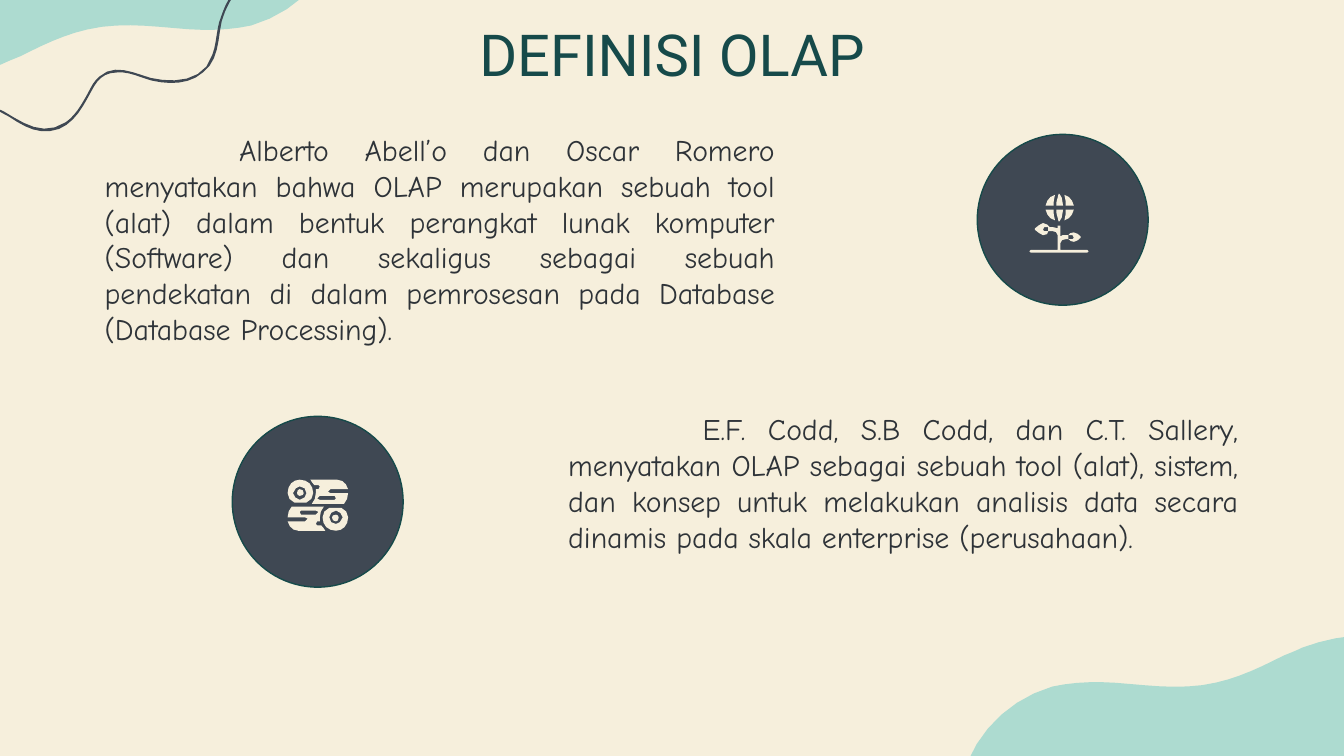
import math

from pptx import Presentation, util as u
from pptx.dml.color import RGBColor
from pptx.enum import shapes, text

COLORS = {"cream": "F6EFDC", "mint": "ADDBD0", "slate": "3F4853", "teal": "164A4A", "ink": "2E3338"}
UNIT = u.Cm(2.54) / 100

deck = Presentation()
deck.slide_width, deck.slide_height = u.Cm(25.4), u.Cm(14.29)
slide = deck.slides.add_slide(deck.slide_layouts[6])
slide.background.fill.solid()
slide.background.fill.fore_color.rgb = RGBColor.from_string(COLORS["cream"])


def draw_outline(contours, color, flip_x=None, flip_y=None):
    builder = None
    for start, *segments in contours:
        points = [start]
        for segment in segments:
            if len(segment) == 2:
                points.append(segment)
                continue
            knots = [points[-1], segment[:2], segment[2:4], segment[4:]]
            span = sum(abs(a - b) for a, b in zip(knots[0], knots[3]))
            steps = 1 if span < 2 else min(6, max(2, math.ceil(span / 6)))
            for step in range(1, steps + 1):
                t = step / steps
                weights = ((1 - t) ** 3, 3 * t * (1 - t) ** 2, 3 * t * t * (1 - t), t ** 3)
                points.append(tuple(sum(w * k[axis] for w, k in zip(weights, knots)) for axis in (0, 1)))
        placed = [((x if flip_x is None else flip_x - x) * UNIT,
                   (y if flip_y is None else flip_y - y) * UNIT) for x, y in dict.fromkeys(points)]
        if builder is None:
            builder = slide.shapes.build_freeform(*placed[0])
        else:
            builder.move_to(*placed[0])
        builder.add_line_segments(placed[1:], close=True)
    outline = builder.convert_to_shape()
    outline.shadow.inherit = False
    outline.fill.solid()
    outline.fill.fore_color.rgb = RGBColor.from_string(COLORS[color])
    outline.line.fill.background()


def write_text(words, left, top, width, height, font, size, color, align, indent=0):
    box = slide.shapes.add_textbox(u.Cm(left), u.Cm(top), u.Cm(width), u.Cm(height))
    frame = box.text_frame
    frame.word_wrap = True
    frame.margin_left = frame.margin_right = frame.margin_top = frame.margin_bottom = 0
    paragraph = frame.paragraphs[0]
    paragraph.text = words
    paragraph.alignment = align
    paragraph.font.name = font
    paragraph.font.size = u.Pt(size)
    paragraph.font.color.rgb = RGBColor.from_string(COLORS[color])
    if indent:
        properties = paragraph._p.get_or_add_pPr()
        properties.set("marL", "0")
        properties.set("indent", str(u.Cm(indent)))


corner_blob = [[
    (-139, -37), (-140, -21, -138, -6, -132, 8), (-123, 29, -103, 45, -82, 52),
    (-79, 53, -77, 54, -74, 54), (-49, 60, -23, 57, 1, 48), (5, 46, 10, 44, 15, 42),
    (31, 34, 47, 26, 65, 22), (86, 17, 108, 19, 130, 21), (150, 23, 169, 23, 187, 19),
    (215, 11, 239, -10, 250, -37)]]
draw_outline(corner_blob, "mint")
draw_outline(corner_blob, "mint", 970, 530)

wavy_strand = [[
    (198, -28), (186, -21, 177, -12, 170, 0), (167, 5, 165, 11, 163, 17),
    (161, 25, 161, 33, 158, 41), (152, 61, 129, 62, 112, 58), (99, 54, 85, 47, 74, 57),
    (69, 61, 67, 67, 64, 72), (60, 79, 56, 86, 49, 91), (32, 102, 18, 92, 3, 83),
    (-21, 68, -52, 74, -69, 97), (-73, 101, -75, 106, -77, 112), (-75, 112),
    (-70, 96, -58, 84, -42, 79), (-25, 73, -8, 78, 7, 87), (19, 95, 30, 101, 44, 96),
    (56, 91, 62, 79, 68, 68), (72, 60, 77, 54, 87, 54), (96, 53, 105, 58, 113, 60),
    (126, 63, 141, 63, 151, 54), (163, 45, 162, 30, 165, 16), (169, 1, 179, -12, 191, -22),
    (199, -26)]]
draw_outline(wavy_strand, "slate")

write_text("DEFINISI OLAP", 1.98, 0.36, 21.44, 1.27, "Roboto", 31, "teal", text.PP_ALIGN.CENTER)

definitions = [
    ("Alberto Abell’o dan Oscar Romero menyatakan bahwa OLAP merupakan sebuah tool (alat) dalam bentuk "
     "perangkat lunak komputer (Software) dan sekaligus sebagai sebuah pendekatan di dalam pemrosesan "
     "pada Database (Database Processing).", 1.98, 2.49, 4.24),
    ("E.F. Codd, S.B Codd, dan C.T. Sallery, menyatakan OLAP sebagai sebuah tool (alat), sistem, dan "
     "konsep untuk melakukan analisis data secara dinamis pada skala enterprise (perusahaan).",
     10.74, 7.77, 3.61)]
for words, left, top, height in definitions:
    write_text(words, left, top, 12.67, height, "Comic Neue", 16, "ink", text.PP_ALIGN.JUSTIFY, 2.54)

for left, top in [(18.47, 2.54), (4.39, 7.87)]:
    badge = slide.shapes.add_shape(shapes.MSO_SHAPE.OVAL, u.Cm(left), u.Cm(top), u.Cm(3.23), u.Cm(3.23))
    badge.shadow.inherit = False
    badge.fill.solid()
    badge.fill.fore_color.rgb = RGBColor.from_string(COLORS["slate"])
    badge.line.color.rgb = RGBColor.from_string(COLORS["teal"])
    badge.line.width = u.Pt(0.75)

left_leaf = [[
    (776, 166), (774, 166, 772, 169, 770, 170), (770, 171), (772, 172, 774, 175, 776, 175),
    (779, 175, 780, 174, 780, 172), (777, 172), (776, 171), (777, 169), (781, 169),
    (780, 168, 779, 166, 776, 166)]]
right_leaf = [[
    (799, 173), (797, 173, 795, 174, 795, 175), (798, 175), (799, 177), (798, 178), (795, 178),
    (796, 179, 797, 180, 799, 180), (801, 180, 803, 178, 804, 177), (804, 176),
    (803, 175, 801, 173, 799, 173)]]
stem_and_soil = [[
    (787, 168), (787, 170), (786, 170, 785, 169, 783, 169), (780, 169), (780, 172), (783, 172),
    (785, 172, 787, 173, 787, 175), (787, 186), (767, 186), (766, 187), (767, 188), (809, 188),
    (810, 187), (809, 186), (789, 186), (789, 181), (789, 179, 791, 178, 793, 178), (795, 178),
    (795, 175), (793, 175), (791, 175, 790, 175, 789, 176), (789, 168)]]
for plant_part in (left_leaf, right_leaf, stem_and_soil):
    draw_outline(plant_part, "cream")

globe_side = [[
    (792, 145), (793, 148, 793, 151, 793, 153), (799, 153), (798, 149, 796, 146, 792, 145)]]
globe_middle = [[
    (788, 144), (788, 144, 787, 145, 787, 147), (786, 149, 786, 151, 786, 153), (791, 153),
    (791, 151, 790, 149, 790, 147), (789, 145, 788, 144, 788, 144)]]
for flip_y in (None, 309):
    draw_outline(globe_middle, "cream", None, flip_y)
    for flip_x in (None, 1577):
        draw_outline(globe_side, "cream", flip_x, flip_y)

log_body = [
    [(249, 369), (250, 371), (249, 372), (238, 372), (236, 371), (238, 369)],
    [(231, 357), (232, 359, 233, 360, 234, 361), (237, 361), (238, 362), (237, 364), (235, 364),
     (235, 367), (235, 370, 234, 373, 232, 375), (256, 375), (258, 373, 259, 370, 259, 367),
     (246, 367), (244, 366), (246, 364), (259, 364), (258, 360, 255, 357, 251, 357)]]
log_core = [[
    (223, 364), (222, 364, 221, 365, 221, 367), (221, 368, 222, 369, 223, 369),
    (225, 369, 226, 368, 226, 367), (226, 365, 225, 364, 223, 364)]]
log_ring = [
    [(223, 362), (226, 362, 228, 364, 228, 367), (228, 369, 226, 372, 223, 372),
     (221, 372, 218, 369, 218, 367), (219, 364, 221, 362, 223, 362)],
    [(223, 357), (218, 357, 214, 361, 214, 367), (214, 370, 216, 373, 219, 374), (228, 374),
     (231, 373, 233, 370, 233, 367), (233, 361, 229, 357, 223, 357)]]
for turn in ((), (473, 752)):
    for log_part in (log_body, log_core, log_ring):
        draw_outline(log_part, "cream", *turn)

deck.save("out.pptx")
